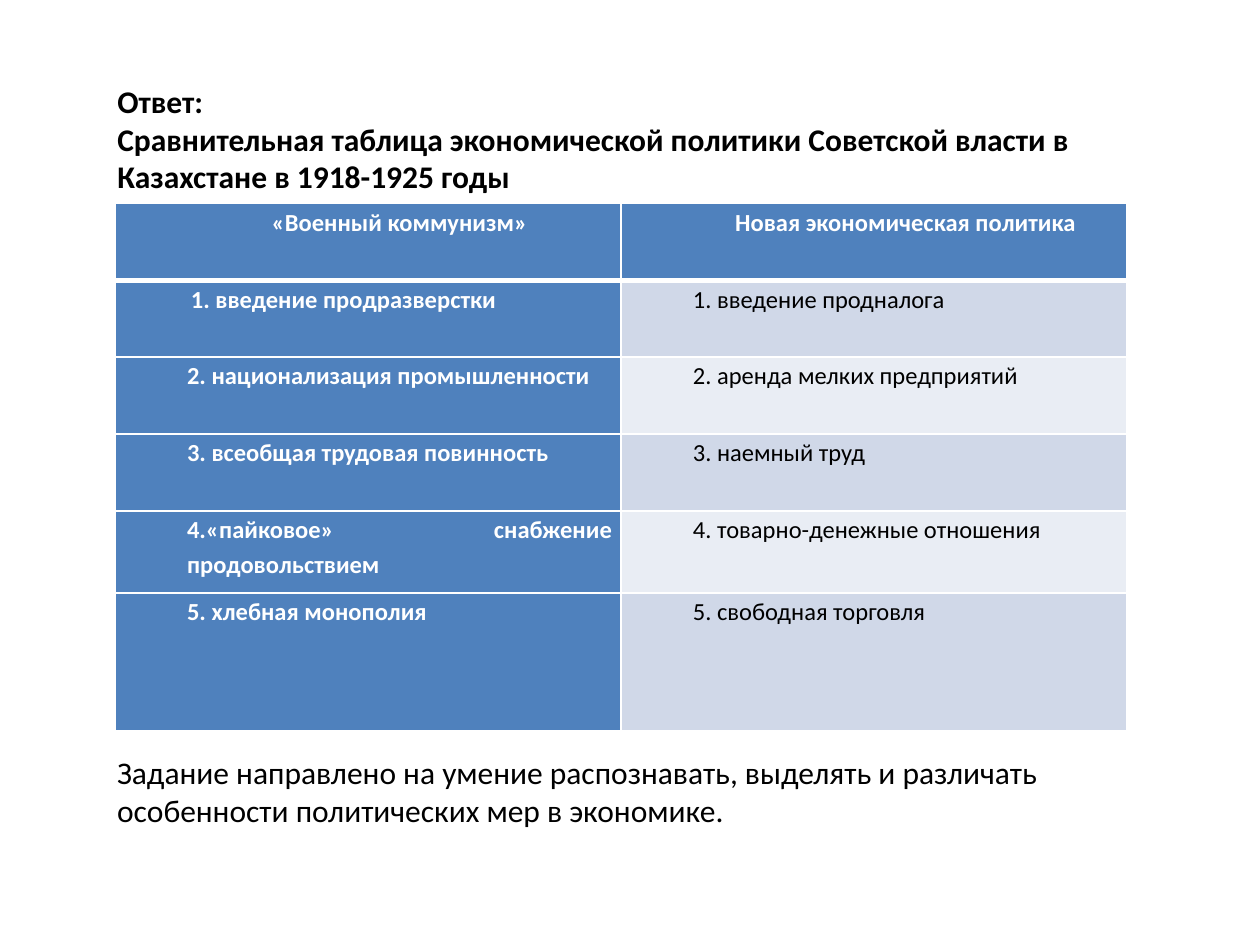
from lxml import etree
from pptx import Presentation
from pptx.dml.color import RGBColor
from pptx.enum.text import MSO_ANCHOR, MSO_AUTO_SIZE, PP_ALIGN as Align
from pptx.oxml.ns import qn
from pptx.util import Cm, Pt

WHITE, BLACK, BLUE = "FFFFFF", "000000", "4F81BD"
BANDS = ["D0D8E8", "E9EDF4"]


def style_text(paragraph, size, color, bold=False):
    for run in paragraph.runs:
        run.font.name = "Calibri"
        run.font.size = Pt(size)
        run.font.bold = bold
        run.font.color.rgb = RGBColor.from_string(color)


def add_border(cell, side, points):
    """Draw a white line on one side (L, R, T or B); call before filling the cell."""
    line = etree.SubElement(cell._tc.get_or_add_tcPr(), qn(f"a:ln{side}"), w=str(Pt(points)))
    fill = etree.SubElement(line, qn("a:solidFill"))
    etree.SubElement(fill, qn("a:srgbClr"), val=WHITE)


prs = Presentation()
prs.slide_width, prs.slide_height = Cm(25.4), Cm(19.05)
slide = prs.slides.add_slide(prs.slide_layouts[5])

# Heading
heading = slide.shapes.title
heading.left, heading.top, heading.width, heading.height = Cm(2.11), Cm(1.52), Cm(20.8), Cm(2.57)
heading.text_frame.text = (
    "Ответ:\n"
    "Сравнительная таблица экономической политики Советской власти в Казахстане в 1918-1925 годы"
)
heading.text_frame.vertical_anchor = MSO_ANCHOR.TOP
heading.text_frame.auto_size = MSO_AUTO_SIZE.NONE
for paragraph in heading.text_frame.paragraphs:
    paragraph.alignment = Align.LEFT
    style_text(paragraph, 18, BLACK, bold=True)

# Comparison of the two policies
policies = [
    ("«Военный коммунизм»", "Новая экономическая политика"),
    ("1. введение продразверстки", "1. введение продналога"),
    ("2. национализация промышленности", "2. аренда мелких предприятий"),
    ("3. всеобщая трудовая повинность", "3. наемный труд"),
    ("4.«пайковое» снабжение продовольствием", "4. товарно-денежные отношения"),
    ("5. хлебная монополия", "5. свободная торговля"),
]
row_heights = [1.55, 1.55, 1.55, 1.55, 1.65, 2.79]
comparison = slide.shapes.add_table(
    len(policies), 2, Cm(2.32), Cm(4.1), Cm(20.4), Cm(sum(row_heights))
).table
comparison.first_col = True

for row, (measures, height) in enumerate(zip(policies, row_heights)):
    comparison.rows[row].height = Cm(height)
    for col, measure in enumerate(measures):
        is_header = row == 0
        is_accent = is_header or col == 0
        cell = comparison.cell(row, col)
        cell.margin_left = cell.margin_right = Cm(0.18)
        cell.margin_top = cell.margin_bottom = 0
        add_border(cell, "L", 1)
        add_border(cell, "R", 1)
        add_border(cell, "T", 3 if row == 1 else 1)
        add_border(cell, "B", 3 if is_header else 1)
        cell.fill.solid()
        cell.fill.fore_color.rgb = RGBColor.from_string(BLUE if is_accent else BANDS[(row - 1) % 2])

        cell.text_frame.text = measure
        paragraph = cell.text_frame.paragraphs[0]
        paragraph.alignment = Align.CENTER if is_header else Align.JUSTIFY
        paragraph.line_spacing = 1.15
        indent = 1.35 if (row, col) == (1, 0) else 1.27
        paragraph._p.get_or_add_pPr().set("marL", str(Cm(indent)))
        style_text(paragraph, 14, WHITE if is_accent else BLACK, bold=is_accent)

# Purpose of the task
purpose = slide.shapes.add_textbox(Cm(2.11), Cm(15.06), Cm(20.4), Cm(1.8)).text_frame
purpose.word_wrap = True
purpose.text = (
    "Задание направлено на умение распознавать, выделять и различать "
    "особенности политических мер в экономике."
)
style_text(purpose.paragraphs[0], 18, BLACK)

prs.save("out.pptx")
